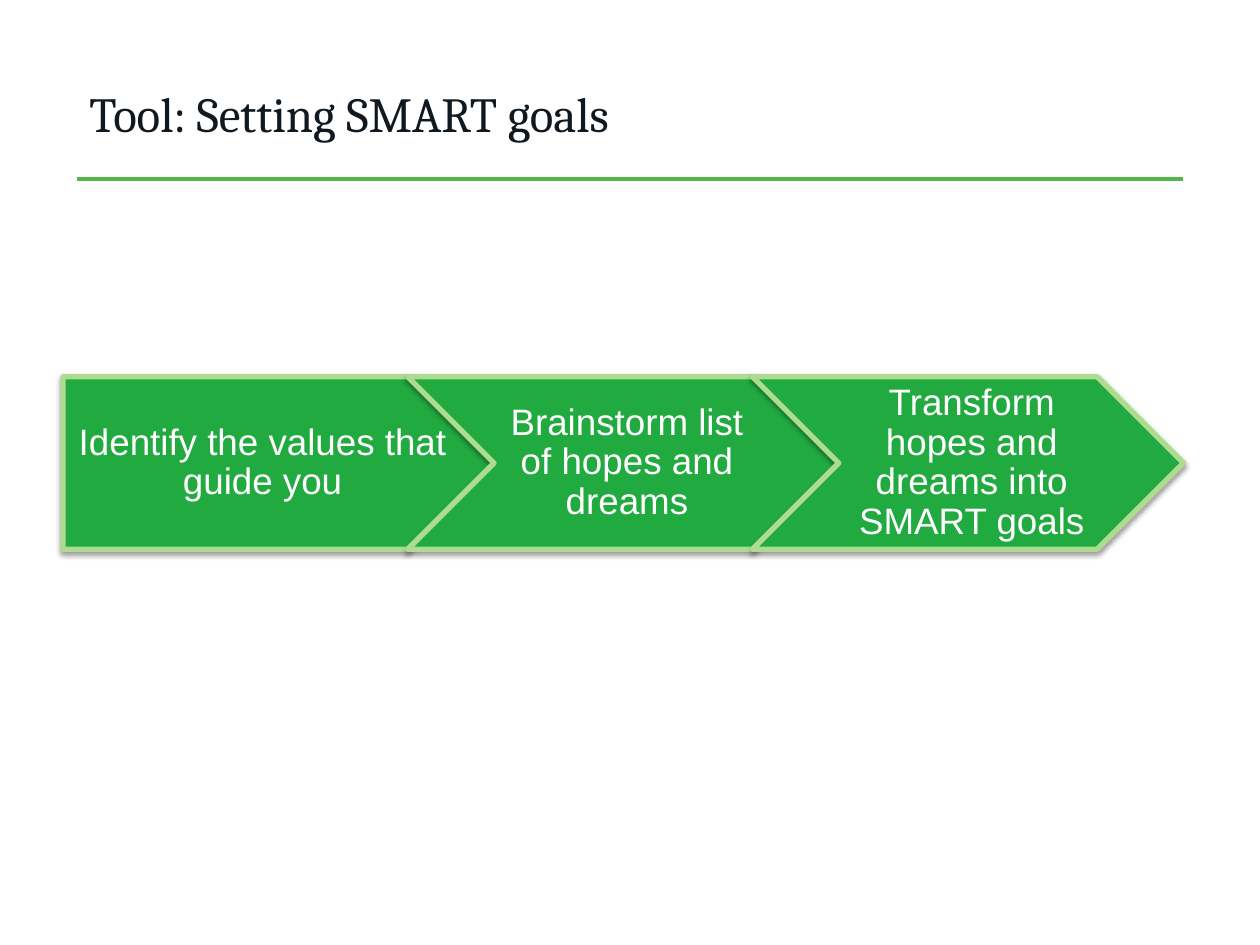
import lxml.etree
import pptx
import pptx.dml.color
import pptx.enum.shapes
import pptx.enum.text
import pptx.oxml.ns
import pptx.util

Inches, Pt = pptx.util.Inches, pptx.util.Pt
SHAPES = pptx.enum.shapes.MSO_SHAPE
MIDDLE = pptx.enum.text.MSO_ANCHOR.MIDDLE
ALIGN = pptx.enum.text.PP_ALIGN

THEME = {
    "title": ("Cambria", 28, "101820"),
    "step": ("Arial", 21, "FFFFFF"),
    "rule": "50B748",
    "arrow_fill": "20AA3F",
    "arrow_line": "ADDC91",
    "shadow": "000000",
}


def color(name):
    return pptx.dml.color.RGBColor.from_string(name)


def write(shape, text, style, alignment):
    """Put one styled, vertically centred paragraph into the shape."""
    shape.text_frame.text = text
    shape.text_frame.word_wrap = True
    shape.text_frame.vertical_anchor = MIDDLE
    paragraph = shape.text_frame.paragraphs[0]
    paragraph.alignment = alignment
    font = paragraph.runs[0].font
    name, size, font_color = THEME[style]
    font.name, font.size = name, Pt(size)
    font.color.rgb = color(font_color)
    return paragraph


presentation = pptx.Presentation()
presentation.slide_width, presentation.slide_height = Inches(10), Inches(7.5)
slide = presentation.slides.add_slide(presentation.slide_layouts[5])

# Title and the rule beneath it
margin = 0.61
title = slide.shapes.title
title.left, title.top = Inches(margin), Inches(0.49)
title.width, title.height = Inches(8.79), Inches(0.81)
write(title, "Tool: Setting SMART goals", "title", ALIGN.LEFT)

rule = slide.shapes.add_connector(
    pptx.enum.shapes.MSO_CONNECTOR.STRAIGHT,
    Inches(margin), Inches(1.42), Inches(10 - margin), Inches(1.42))
rule.line.color.rgb = color(THEME["rule"])
rule.line.width = Pt(2)
lxml.etree.SubElement(rule._element.spPr, pptx.oxml.ns.qn("a:effectLst"))

# Process arrows, each overlapping the one before by a fifth of its width
steps = [
    (SHAPES.PENTAGON, 0.12, "Identify the values that guide you"),
    (SHAPES.CHEVRON, 0.09, "Brainstorm list of hopes and dreams"),
    (SHAPES.CHEVRON, 0.09, "Transform hopes and dreams into SMART goals"),
]
arrow_left, arrow_top, arrow_width, arrow_height = 0.5, 2.99, 3.42, 1.37
pitch = arrow_width * 0.8

for index, (preset, left_inset, text) in enumerate(steps):
    arrow = slide.shapes.add_shape(
        preset, Inches(arrow_left + index * pitch), Inches(arrow_top),
        Inches(arrow_width), Inches(arrow_height))
    arrow.fill.solid()
    arrow.fill.fore_color.rgb = color(THEME["arrow_fill"])
    arrow.line.color.rgb = color(THEME["arrow_line"])
    arrow.line.width = Pt(3)

    arrow.shadow.inherit = False
    effects = arrow._element.spPr.find(pptx.oxml.ns.qn("a:effectLst"))
    shadow = lxml.etree.SubElement(
        effects, pptx.oxml.ns.qn("a:outerShdw"), blurRad=str(Pt(3.1)),
        dist=str(Pt(1.6)), dir="5400000", rotWithShape="0")
    shade = lxml.etree.SubElement(
        shadow, pptx.oxml.ns.qn("a:srgbClr"), val=THEME["shadow"])
    lxml.etree.SubElement(shade, pptx.oxml.ns.qn("a:alpha"), val="38000")

    frame = arrow.text_frame
    frame.margin_left, frame.margin_right = Inches(left_inset), Inches(0.03)
    frame.margin_top = frame.margin_bottom = Inches(0.06)
    paragraph = write(arrow, text, "step", ALIGN.CENTER)
    paragraph.line_spacing = 0.9

presentation.save("out.pptx")
